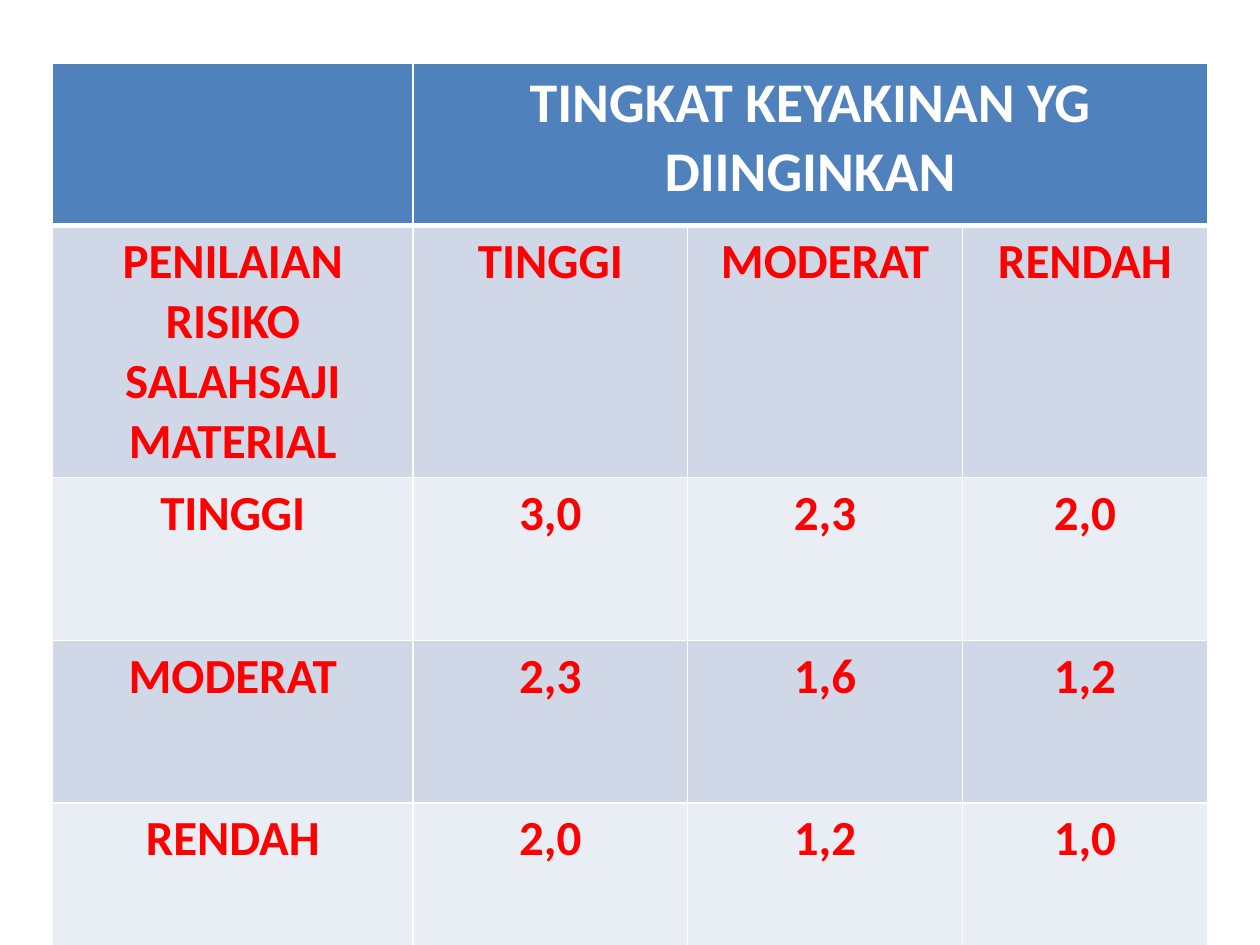
from dataclasses import dataclass

from lxml.etree import SubElement
from pptx import Presentation
from pptx.dml.color import RGBColor
from pptx.enum.text import PP_ALIGN
from pptx.oxml.ns import qn
from pptx.table import _Cell as Cell
from pptx.util import Pt


@dataclass(frozen=True)
class Theme:
    font: str = "Calibri"
    head: str = "4F81BD"
    bands: tuple[str, str] = ("D0D8E8", "E9EDF4")
    white: str = "FFFFFF"
    red: str = "FF0000"
    head_size: int = 32
    body_size: int = 28
    thin: int = 1
    thick: int = 3


@dataclass(frozen=True)
class Look:
    fill: str
    ink: str
    size: int
    top: int
    bottom: int


THEME = Theme()
LEFT, TOP = 30, 36
WIDTHS = (206, 157, 157, 140)
HEIGHTS = (92.9, 84.2, 92.9, 92.9, 92.9)
ROWS = (
    ("", "TINGKAT KEYAKINAN YG DIINGINKAN", "", ""),
    ("PENILAIAN RISIKO SALAHSAJI MATERIAL", "TINGGI", "MODERAT", "RENDAH"),
    ("TINGGI", "3,0", "2,3", "2,0"),
    ("MODERAT", "2,3", "1,6", "1,2"),
    ("RENDAH", "2,0", "1,2", "1,0"),
)


def row_look(row: int) -> Look:
    if row == 0:
        return Look(THEME.head, THEME.white, THEME.head_size, THEME.thin, THEME.thick)
    top = THEME.thick if row == 1 else THEME.thin
    return Look(THEME.bands[(row - 1) % 2], THEME.red, THEME.body_size, top, THEME.thin)


def add_edges(cell: Cell, look: Look) -> None:
    """Draw white cell borders; call before filling, as the schema wants lines first."""
    props = cell._tc.get_or_add_tcPr()
    edges = {"L": THEME.thin, "R": THEME.thin, "T": look.top, "B": look.bottom}
    for side, width in edges.items():
        line = SubElement(props, qn(f"a:ln{side}"), w=str(Pt(width)))
        fill = SubElement(line, qn("a:solidFill"))
        SubElement(fill, qn("a:srgbClr"), val=THEME.white)


def fill_cell(cell: Cell, text: str, look: Look) -> None:
    add_edges(cell, look)
    cell.fill.solid()
    cell.fill.fore_color.rgb = RGBColor.from_string(look.fill)
    if not text:
        return
    para = cell.text_frame.paragraphs[0]
    para.alignment = PP_ALIGN.CENTER
    run = para.add_run()
    run.text = text
    run.font.name = THEME.font
    run.font.size = Pt(look.size)
    run.font.bold = True
    run.font.color.rgb = RGBColor.from_string(look.ink)


def main() -> None:
    deck = Presentation()
    deck.slide_width, deck.slide_height = Pt(720), Pt(540)
    slide = deck.slides.add_slide(deck.slide_layouts[6])
    frame = slide.shapes.add_table(
        len(ROWS), len(WIDTHS), Pt(LEFT), Pt(TOP), Pt(sum(WIDTHS)), Pt(sum(HEIGHTS))
    )
    table = frame.table
    for col, width in zip(table.columns, WIDTHS):
        col.width = Pt(width)
    for row, height in zip(table.rows, HEIGHTS):
        row.height = Pt(height)
    table.cell(0, 1).merge(table.cell(0, 3))
    for r, texts in enumerate(ROWS):
        for c, text in enumerate(texts):
            fill_cell(table.cell(r, c), text, row_look(r))
    deck.save("out.pptx")


if __name__ == "__main__":
    main()
